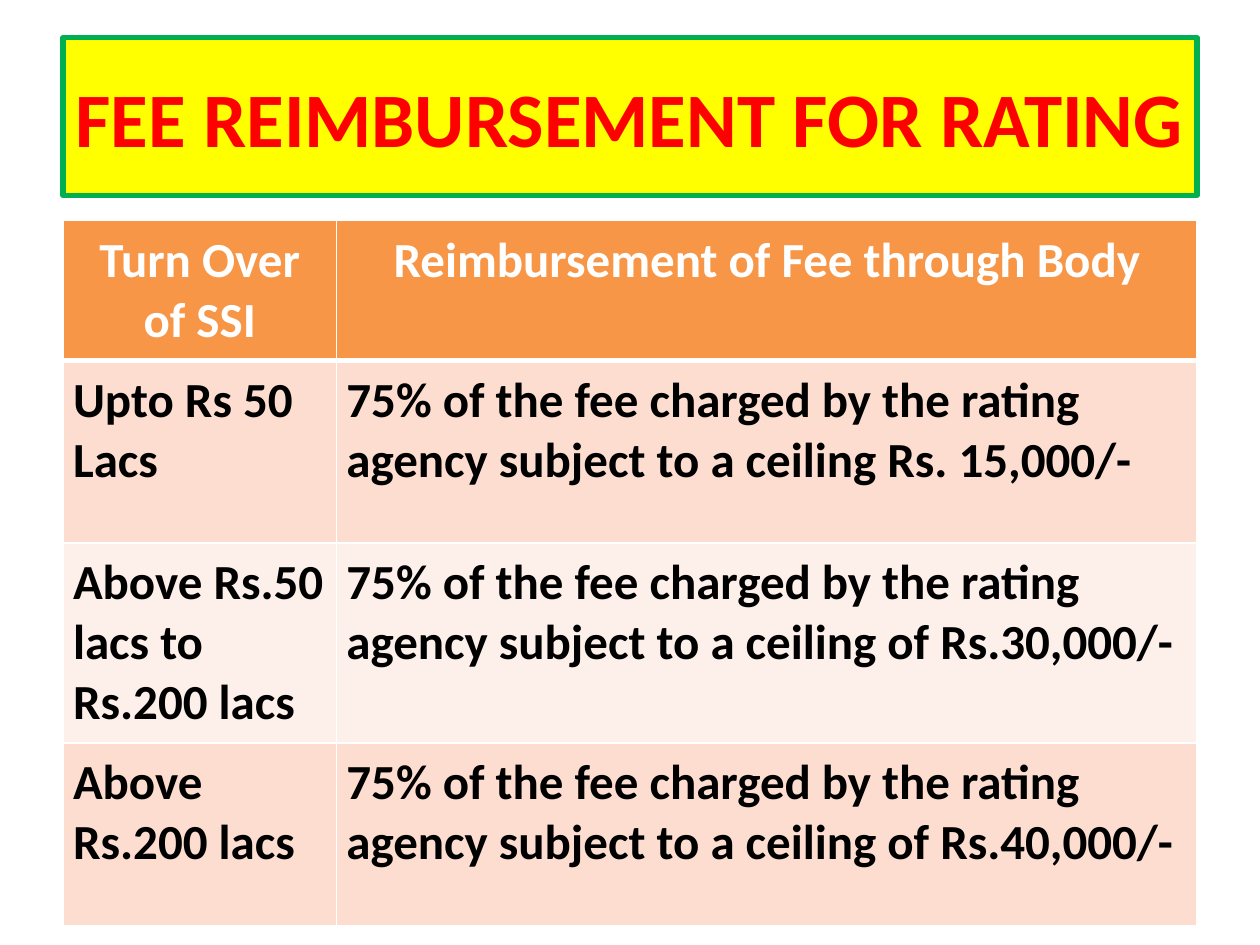
from pptx import Presentation
from pptx.util import Inches, Pt
from pptx.dml.color import RGBColor
from pptx.enum import shapes, text
from pptx.oxml import parse_xml
from pptx.oxml.ns import nsdecls

FONT = "Calibri"
HEAD = ("Turn Over of SSI", "Reimbursement of Fee through Body")
FEE = "75% of the fee charged by the rating agency subject to a ceiling "
ROWS = [
    HEAD,
    ("Upto Rs 50 Lacs", FEE + "Rs. 15,000/-"),
    ("Above Rs.50 lacs to Rs.200 lacs", FEE + "of Rs.30,000/-"),
    ("Above Rs.200 lacs", FEE + "of Rs.40,000/-"),
]
WIDTHS = (2.17, 6.83)
HEIGHTS = (0.89, 1.45, 1.45, 1.45)
BANDS = ("FDEFE9", "FCDDCF")


def paint(fmt, color):
    """Give a fill one solid colour."""
    fmt.solid()
    fmt.fore_color.rgb = RGBColor.from_string(color)


def write(frame, words, size, color, align):
    """Put one bold paragraph into a text frame."""
    frame.text = words
    para = frame.paragraphs[0]
    para.alignment = align
    font = para.font
    font.name, font.size, font.bold = FONT, Pt(size), True
    font.color.rgb = RGBColor.from_string(color)


def edge(cell, side, width):
    """Draw one white cell border; call before the cell is filled."""
    cell._tc.get_or_add_tcPr().append(parse_xml(
        f'<a:{side} {nsdecls("a")} w="{Pt(width)}"><a:solidFill>'
        f'<a:srgbClr val="FFFFFF"/></a:solidFill></a:{side}>'))


def add_title(slide, box):
    bar = slide.shapes.add_shape(shapes.MSO_SHAPE.RECTANGLE, *map(Inches, box))
    bar.shadow.inherit = False
    paint(bar.fill, "FFFF00")
    paint(bar.line.fill, "00B050")
    bar.line.width = Pt(3)
    frame = bar.text_frame
    frame.word_wrap = False
    frame.vertical_anchor = text.MSO_ANCHOR.MIDDLE
    write(frame, "FEE REIMBURSEMENT FOR RATING", 44, "FF0000",
          text.PP_ALIGN.CENTER)


def add_fees(slide, box):
    table = slide.shapes.add_table(
        len(ROWS), len(WIDTHS), *map(Inches, box)).table
    for col, width in zip(table.columns, WIDTHS):
        col.width = Inches(width)
    for r, (row, height) in enumerate(zip(ROWS, HEIGHTS)):
        table.rows[r].height = Inches(height)
        head = r == 0
        for c, words in enumerate(row):
            cell = table.cell(r, c)
            cell.margin_left = cell.margin_right = Inches(0.08)
            cell.margin_top = cell.margin_bottom = Inches(0.08)
            # The rule below the header is thicker than the rest
            edge(cell, "lnL", 1)
            edge(cell, "lnR", 1)
            edge(cell, "lnT", 3 if r == 1 else 1)
            edge(cell, "lnB", 3 if head else 1)
            paint(cell.fill, "F79646" if head else BANDS[r % 2])
            write(cell.text_frame, words, 28,
                  "FFFFFF" if head else "000000",
                  text.PP_ALIGN.CENTER if head else text.PP_ALIGN.LEFT)


def main():
    deck = Presentation()
    deck.slide_width, deck.slide_height = Inches(10), Inches(7.5)
    slide = deck.slides.add_slide(deck.slide_layouts[6])
    add_title(slide, (0.5, 0.3, 9, 1.25))
    add_fees(slide, (0.5, 1.75, 9, sum(HEIGHTS)))
    deck.save("out.pptx")


if __name__ == "__main__":
    main()
